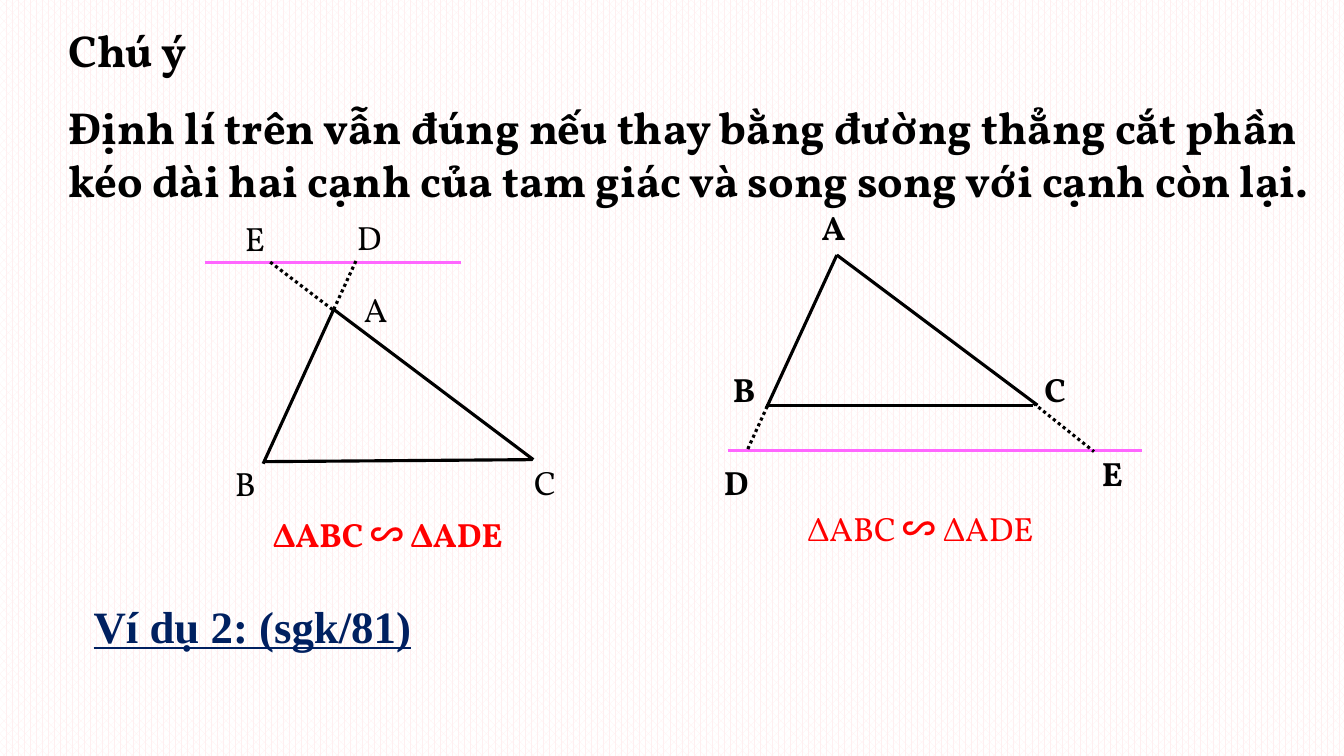
from lxml.etree import SubElement
from pptx import Presentation
from pptx.dml.color import RGBColor
from pptx.enum.dml import MSO_LINE, MSO_PATTERN
from pptx.enum.shapes import MSO_CONNECTOR
from pptx.enum.text import MSO_AUTO_SIZE, PP_ALIGN
from pptx.oxml.ns import qn
from pptx.util import Emu, Pt

PX = 9144  # 100 px to the inch
BLACK = RGBColor(0x00, 0x00, 0x00)
RED = RGBColor(0xFF, 0x00, 0x00)
NAVY = RGBColor(0x00, 0x20, 0x60)
PINK = RGBColor(0xFF, 0x66, 0xFF)
ROSE = RGBColor(0xFF, 0xEF, 0xF0)
WHITE = RGBColor(0xFF, 0xFF, 0xFF)
SERIF = "Vollkorn"
SYMBOL = "Noto Sans CJK JP"
TIMES = "Times New Roman"


def px(value):
    return Emu(value * PX)


def set_background(slide):
    fill = slide.background.fill
    fill.patterned()
    fill.pattern = MSO_PATTERN.PERCENT_60
    fill.fore_color.rgb = ROSE
    fill.back_color.rgb = WHITE


def add_text_box(shapes, left, top, width, height, wrap=True):
    frame = shapes.add_textbox(px(left), px(top), px(width), px(height)).text_frame
    frame.word_wrap = wrap
    frame.auto_size = MSO_AUTO_SIZE.SHAPE_TO_FIT_TEXT
    return frame


def add_run(paragraph, text, size, color=BLACK, bold=False, name=SERIF):
    run = paragraph.add_run()
    run.text = text
    font = run.font
    font.size = Pt(size)
    font.bold = bold
    font.color.rgb = color
    font.name = name
    return run


def add_segment(shapes, start, end, color=BLACK, dotted=False):
    connector = shapes.add_connector(
        MSO_CONNECTOR.STRAIGHT, *(px(value) for value in (*start, *end))
    )
    connector.line.color.rgb = color
    connector.line.width = Pt(2.25)
    if dotted:
        connector.line.dash_style = MSO_LINE.ROUND_DOT
    SubElement(connector.element.spPr, qn("a:effectLst"))


def add_figure(slide, sides, parallel, extensions, labels, bold):
    """Triangle sides, the parallel line, dotted extensions and vertex labels."""
    shapes = slide.shapes.add_group_shape().shapes
    for start, end in sides:
        add_segment(shapes, start, end)
    add_segment(shapes, *parallel, color=PINK)
    for start, end in extensions:
        add_segment(shapes, start, end, dotted=True)
    for letter, (left, top, width) in labels.items():
        frame = add_text_box(shapes, left, top, width, 50)
        add_run(frame.paragraphs[0], letter, 24, bold=bold)


def add_similarity(slide, left, top, width, bold):
    frame = add_text_box(slide.shapes, left, top, width, 50, wrap=False)
    paragraph = frame.paragraphs[0]
    add_run(paragraph, "ΔABC ", 24, RED, bold)
    sign = add_run(paragraph, "∽", 24, RED, True, SYMBOL)
    SubElement(sign.font._element, qn("a:ea"), typeface=SYMBOL)
    add_run(paragraph, " ΔADE", 24, RED, bold)


def add_note(slide):
    frame = add_text_box(slide.shapes, 58, 18, 1275, 199)
    add_run(frame.paragraphs[0], "Chú ý", 32, bold=True)
    theorem = frame.add_paragraph()
    theorem.space_before = Pt(16)
    add_run(
        theorem,
        "Định lí trên vẫn đúng nếu thay bằng đường thẳng cắt phần "
        "kéo dài hai cạnh của tam giác và song song với cạnh còn lại.",
        32,
        bold=True,
    )


def add_example(slide):
    paragraph = add_text_box(slide.shapes, 83, 562, 371, 81).paragraphs[0]
    paragraph.alignment = PP_ALIGN.JUSTIFY
    paragraph.line_spacing = 1.5
    paragraph.space_before = Pt(6)
    run = add_run(paragraph, "Ví dụ 2: (sgk/81)", 32, NAVY, True, TIMES)
    run.font.underline = True


def main():
    presentation = Presentation()
    presentation.slide_width = px(1333)
    presentation.slide_height = px(750)
    slide = presentation.slides.add_slide(presentation.slide_layouts[6])
    set_background(slide)
    add_note(slide)
    add_figure(
        slide,
        sides=[
            ((830, 253), (760, 405)),
            ((760, 402), (1025, 402)),
            ((830, 253), (1029, 402)),
        ],
        parallel=((722, 447), (1133, 447)),
        extensions=[((761, 403), (741, 447)), ((1025, 400), (1085, 448))],
        labels={
            "A": (805, 200, 45),
            "B": (717, 361, 33),
            "C": (1026, 361, 41),
            "D": (708, 453, 42),
            "E": (1083, 444, 42),
        },
        bold=True,
    )
    add_figure(
        slide,
        sides=[
            ((331, 307), (261, 460)),
            ((261, 458), (528, 456)),
            ((331, 307), (529, 456)),
        ],
        parallel=((203, 260), (457, 260)),
        extensions=[((353, 259), (331, 307)), ((268, 260), (331, 308))],
        labels={
            "A": (351, 282, 42),
            "B": (223, 454, 42),
            "C": (520, 453, 42),
            "D": (344, 210, 42),
            "E": (233, 211, 43),
        },
        bold=False,
    )
    add_similarity(slide, 261, 505, 259, bold=True)
    add_similarity(slide, 791, 499, 255, bold=False)
    add_example(slide)
    presentation.save("out.pptx")


if __name__ == "__main__":
    main()
